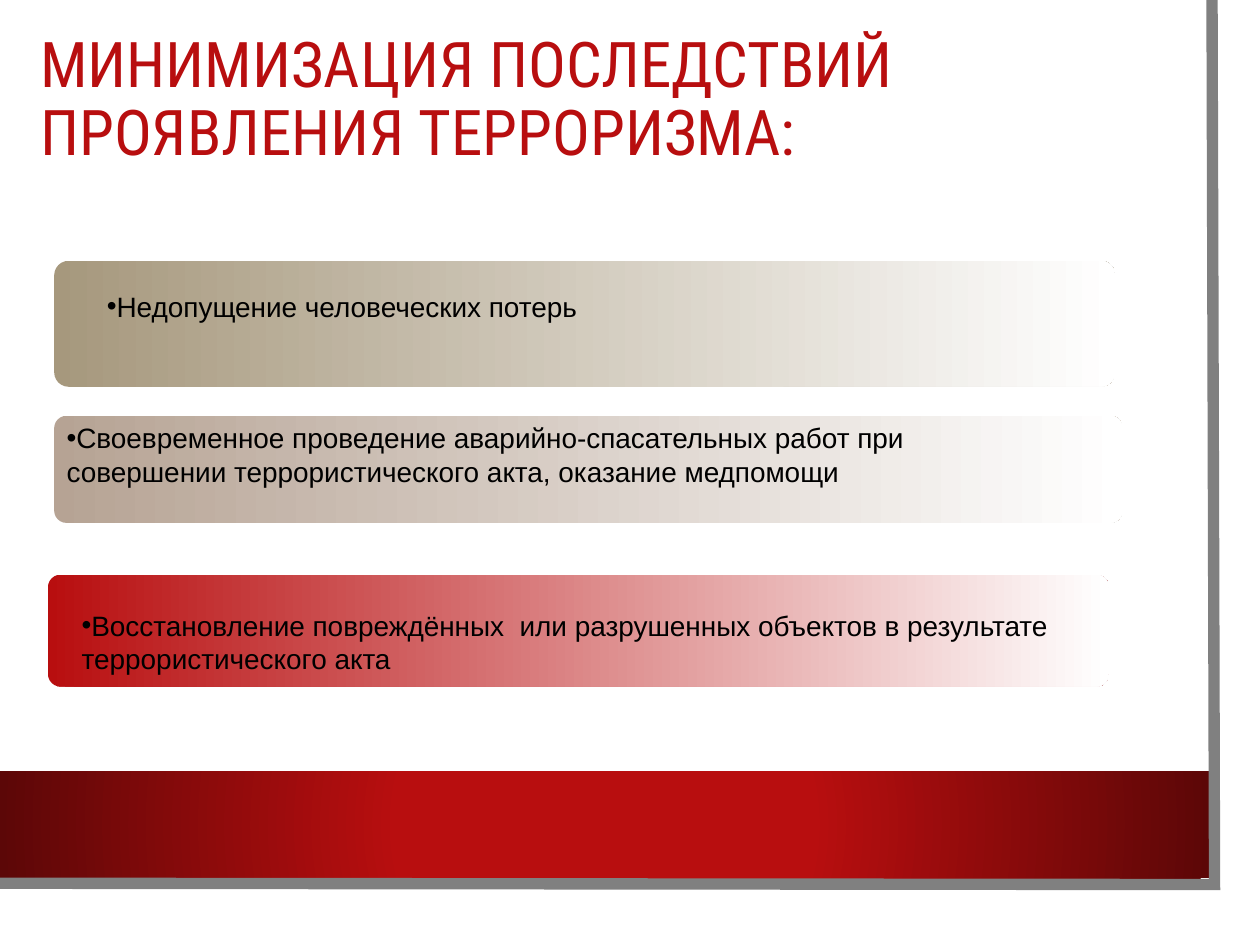
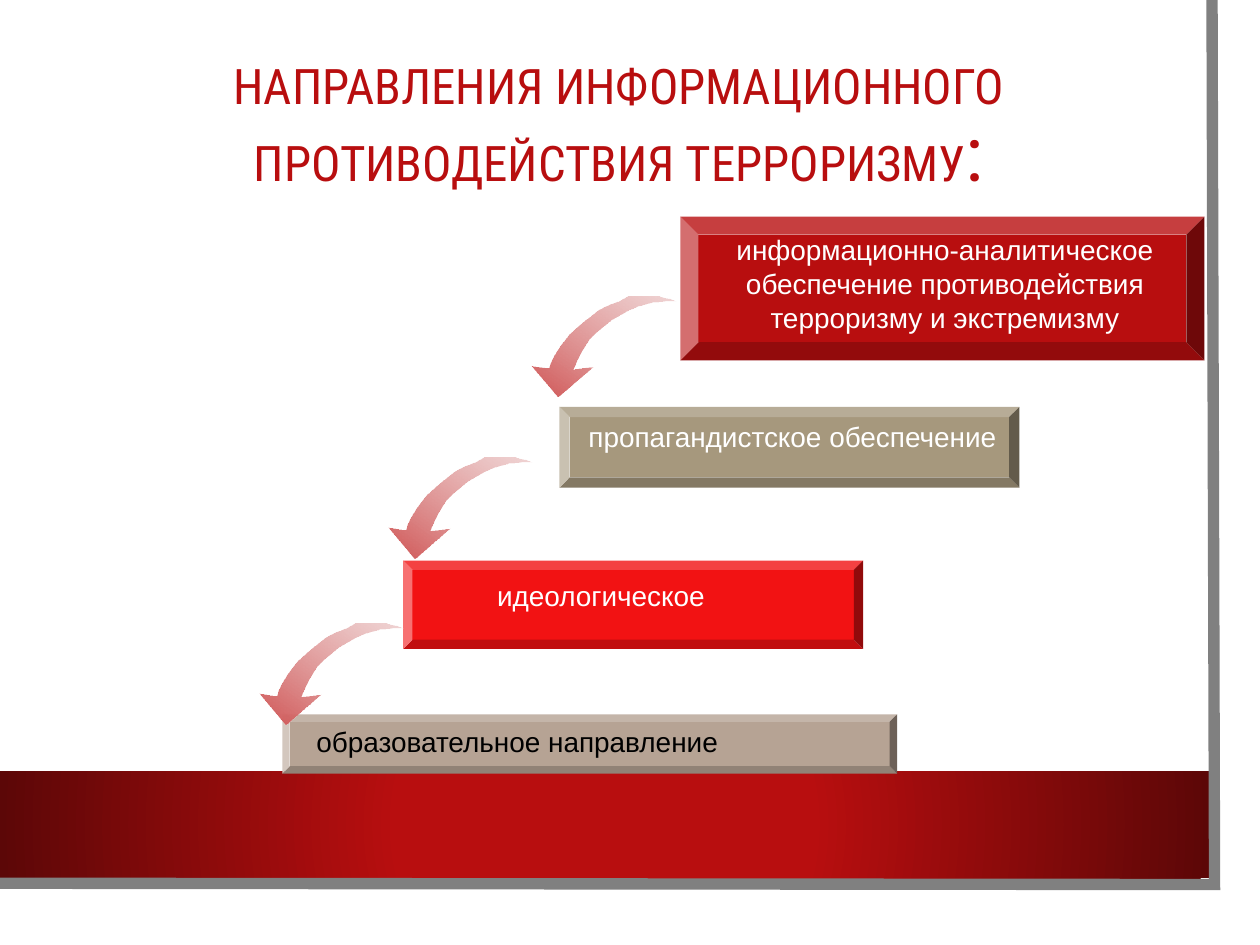
from lxml.etree import SubElement
from pptx import Presentation
from pptx.dml.color import RGBColor
from pptx.enum.shapes import MSO_SHAPE
from pptx.enum.text import MSO_ANCHOR, PP_ALIGN
from pptx.oxml import parse_xml
from pptx.oxml.ns import nsdecls, qn
from pptx.util import Inches, Pt

# Grid: 1000 columns by 750 rows of square cells
COLUMNS, ROWS = 1000, 750
CELL = Inches(10) // COLUMNS

RED, DARK_RED, BRIGHT_RED = "B80E0F", "5C0707", "F21213"
KHAKI, TAUPE, GRAY = "A6987D", "B6A394", "808080"
WHITE, BLACK = "FFFFFF", "000000"
TITLE_FONT, BODY_FONT = "Roboto Condensed", "Arial"

ACROSS = '<a:lin ang="0" scaled="0"/>'
DOWN_LEFT = '<a:lin ang="7518000" scaled="0"/>'
FROM_CENTER = ('<a:path path="circle"><a:fillToRect l="50000" t="50000" '
               'r="50000" b="50000"/></a:path>')


def paint(shape, stops, direction=ACROSS):
    """Fill with one colour, or with stops of (percent, colour, opacity)."""
    shape.shadow.inherit = False
    shape.line.fill.background()
    if isinstance(stops, str):
        shape.fill.solid()
        shape.fill.fore_color.rgb = RGBColor.from_string(stops)
        return
    stop_xml = "".join(
        f'<a:gs pos="{percent * 1000}"><a:srgbClr val="{color}">'
        f'<a:alpha val="{opacity * 1000}"/></a:srgbClr></a:gs>'
        for percent, color, opacity in stops)
    gradient = parse_xml(f'<a:gradFill {nsdecls("a")} rotWithShape="1">'
                         f'<a:gsLst>{stop_xml}</a:gsLst>{direction}</a:gradFill>')
    shape.fill.background()
    properties = shape.element.spPr
    properties.replace(properties.find(qn("a:noFill")), gradient)


def write(page, area, text, size, color, font=BODY_FONT, align=PP_ALIGN.LEFT,
          bullet=False):
    """Add a wrapped text box and return its paragraph."""
    box = page.shapes.add_textbox(*(CELL * length for length in area))
    box.text_frame.word_wrap = True
    para = box.text_frame.paragraphs[0]
    para.text = text
    para.alignment = align
    if bullet:
        settings = para._p.get_or_add_pPr()
        settings.set("marL", "0")
        settings.set("indent", "0")
        SubElement(settings, qn("a:buFont")).set("typeface", font)
        SubElement(settings, qn("a:buChar")).set("char", "•")
    para.font.name = font
    para.font.size = Pt(size)
    para.font.color.rgb = RGBColor.from_string(color)
    if font == TITLE_FONT:
        box.text_frame.vertical_anchor = MSO_ANCHOR.MIDDLE
        para.line_spacing = 0.9
    return para


deck = Presentation()
deck.slide_width, deck.slide_height = CELL * COLUMNS, CELL * ROWS
pages = [deck.slides.add_slide(deck.slide_layouts[6]) for _ in range(2)]

# Shared sheet, red band and gray edge
for page in pages:
    sheet = page.shapes.add_shape(MSO_SHAPE.RECTANGLE, 0, 0, CELL * 983, CELL * 727)
    paint(sheet, WHITE)
    band = page.shapes.add_shape(MSO_SHAPE.RECTANGLE, 0, CELL * 612,
                                 CELL * 960, CELL * 85)
    paint(band, [(34, RED, 100), (100, DARK_RED, 100)], FROM_CENTER)
    outline = page.shapes.build_freeform(962, 0, scale=CELL)
    outline.add_line_segments([(964, 702), (-2, 701)], close=False)
    edge = outline.convert_to_shape()
    edge.shadow.inherit = False
    edge.fill.background()
    edge.line.width = Pt(6.5)
    edge.line.color.rgb = RGBColor.from_string(GRAY)
    stroke = edge.element.spPr.find(qn("a:ln"))
    SubElement(stroke, qn("a:miter")).set("lim", "800000")

goals_page, directions_page = pages

# Slide 1: goals on fading cards
write(goals_page, (22, 17, 928, 126),
      "МИНИМИЗАЦИЯ ПОСЛЕДСТВИЙ ПРОЯВЛЕНИЯ ТЕРРОРИЗМА:", 36, RED, TITLE_FONT)

goals = [
    (KHAKI, (43, 207, 842, 100), (75, 225, 755, 77),
     "Недопущение человеческих потерь"),
    (TAUPE, (43, 330, 848, 85), (43, 329, 811, 104),
     "Своевременное проведение аварийно-спасательных работ при совершении "
     "террористического акта, оказание медпомощи"),
    (RED, (38, 456, 842, 89), (55, 478, 826, 64),
     "Восстановление повреждённых  или разрушенных объектов в результате "
     "террористического акта"),
]
for color, card_area, text_area, text in goals:
    card = goals_page.shapes.add_shape(MSO_SHAPE.ROUNDED_RECTANGLE,
                                       *(CELL * length for length in card_area))
    card.adjustments[0] = 0.115
    paint(card, [(0, color, 100), (100, WHITE, 100)])
    write(goals_page, text_area, text, 16, BLACK, bullet=True)

# Slide 2: staircase of directions
heading = write(directions_page, (28, 40, 926, 126),
                "НАПРАВЛЕНИЯ ИНФОРМАЦИОННОГО ПРОТИВОДЕЙСТВИЯ ТЕРРОРИЗМУ",
                28, RED, TITLE_FONT, PP_ALIGN.CENTER)
colon = heading.add_run()
colon.text = ":"
colon.font.size = Pt(44)

directions = [
    (RED, (540, 172, 416, 114), 0.126, (547, 180, 406, 91), WHITE,
     "информационно-аналитическое обеспечение противодействия "
     "терроризму и экстремизму"),
    (KHAKI, (444, 323, 365, 64), 0.126, (446, 328, 366, 61), WHITE,
     "пропагандистское обеспечение"),
    (BRIGHT_RED, (320, 445, 365, 70), 0.104, (329, 454, 296, 37), WHITE,
     "идеологическое"),
    (TAUPE, (224, 567, 488, 47), 0.126, (230, 570, 361, 61), BLACK,
     "образовательное направление"),
]
for color, step_area, depth, text_area, text_color, text in directions:
    step = directions_page.shapes.add_shape(MSO_SHAPE.BEVEL,
                                            *(CELL * length for length in step_area))
    step.adjustments[0] = depth
    paint(step, color)
    write(directions_page, text_area, text, 16, text_color, align=PP_ALIGN.CENTER)

# Curved arrows: one outline, measured from its tail
arrow_outline = [
    (-4, 0), (-12, 0), (-22, 1), (-33, 4), (-40, 7), (-47, 11), (-54, 15),
    (-60, 20), (-66, 25), (-71, 30), (-77, 39), (-81, 47), (-84, 54),
    (-68, 52), (-96, 76), (-117, 51), (-103, 53), (-102, 49), (-99, 43),
    (-94, 35), (-87, 26), (-77, 17), (-64, 7), (-56, 3), (-48, 0), (-41, -4),
    (-34, -4), (-28, -4), (-16, -4), (-8, -2), (-2, 0),
]
for tail_x, tail_y in [(539, 239), (425, 367), (323, 499)]:
    outline = directions_page.shapes.build_freeform(tail_x, tail_y, scale=CELL)
    outline.add_line_segments([(tail_x + x, tail_y + y) for x, y in arrow_outline])
    paint(outline.convert_to_shape(), [(0, "E9C2C2", 68), (100, "D05656", 100)],
          DOWN_LEFT)

deck.save("out.pptx")
